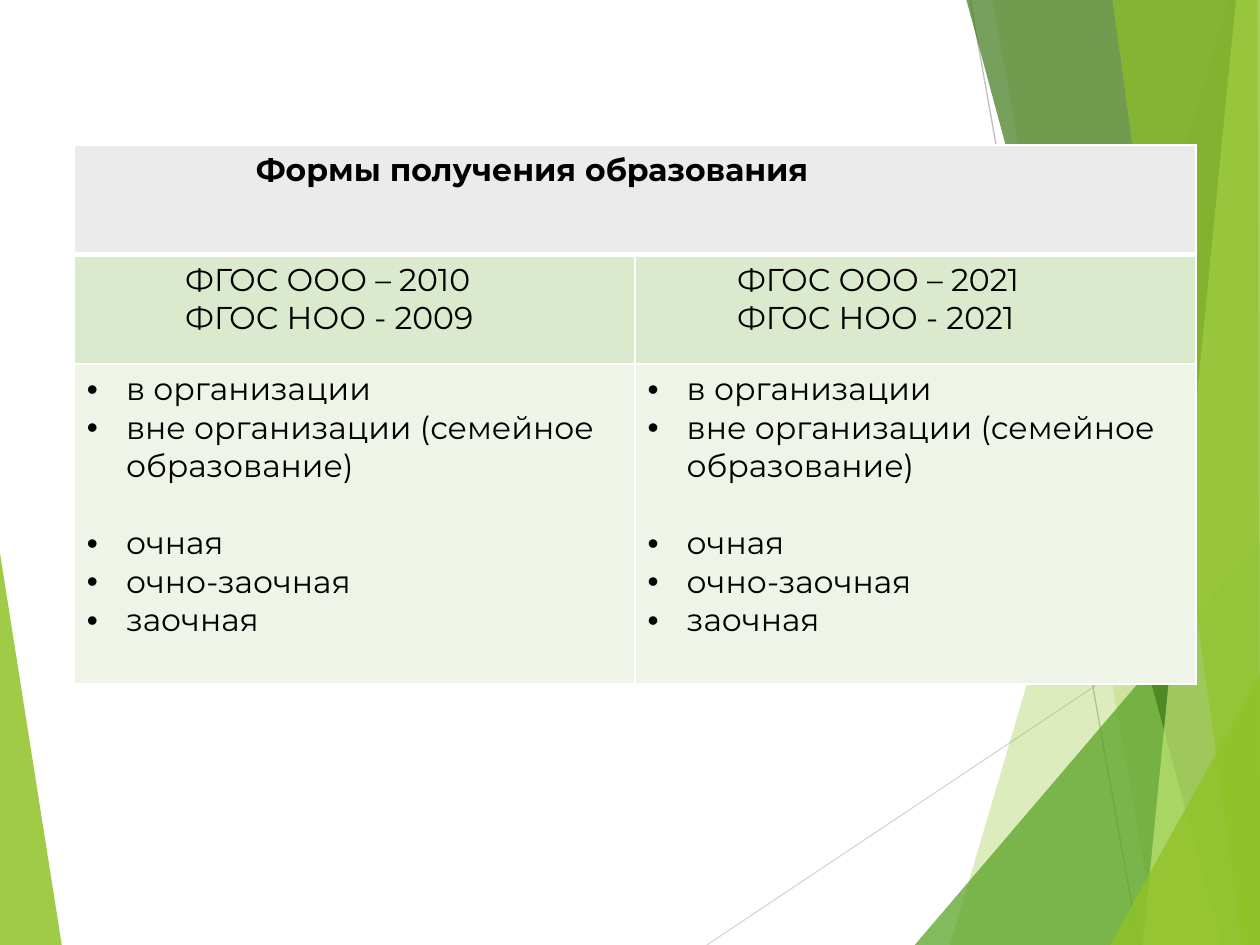
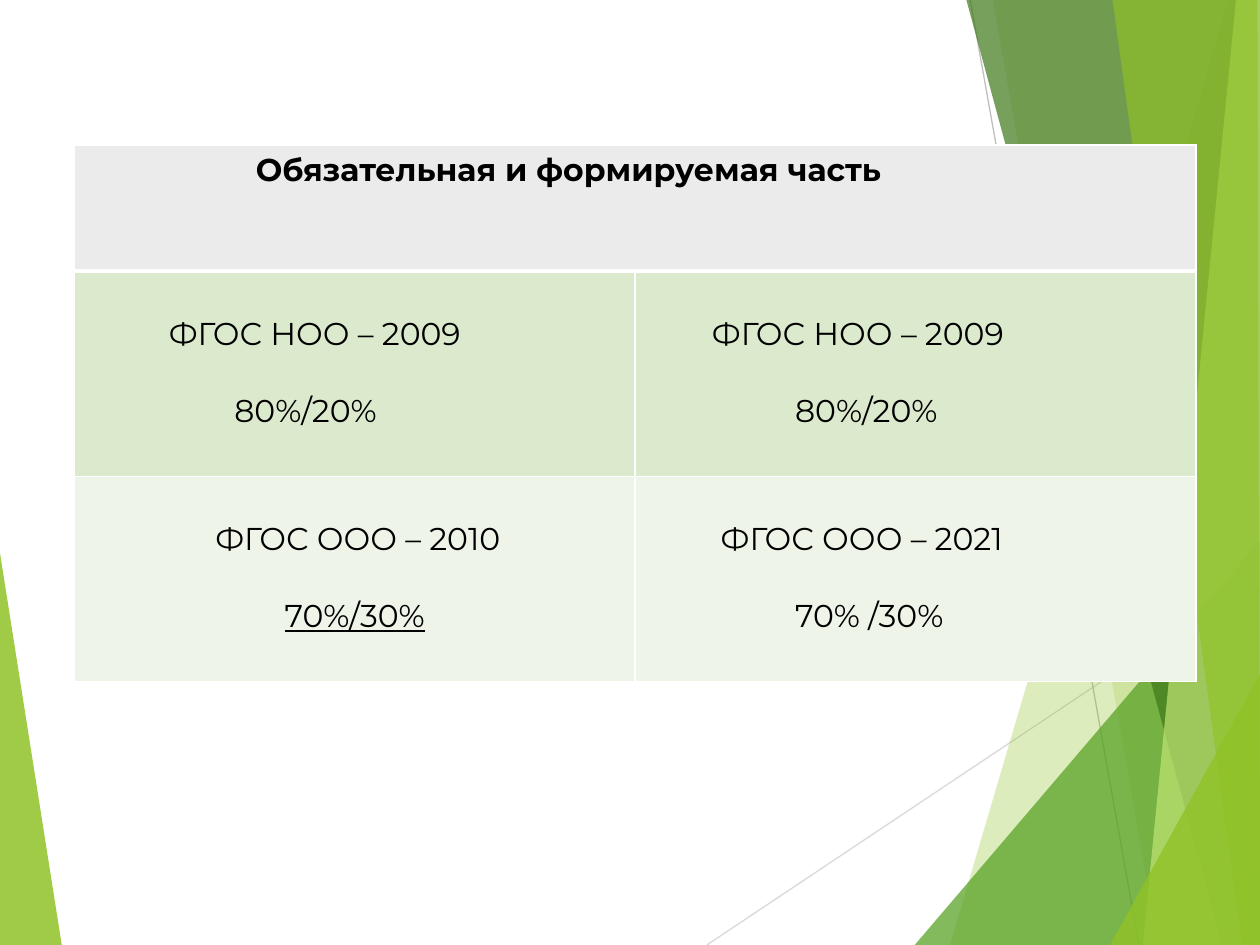
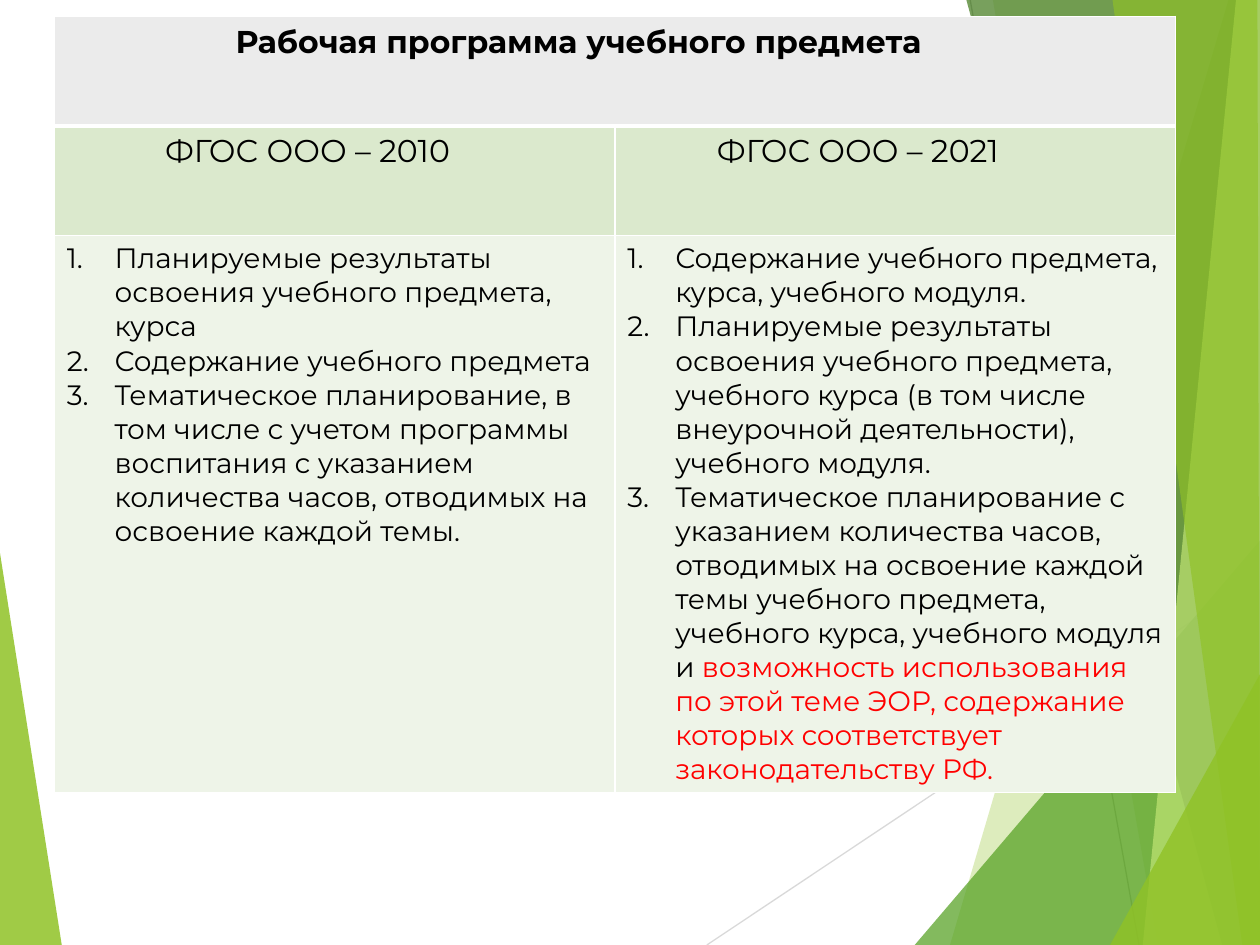
from dataclasses import dataclass

from lxml import etree
from pptx import Presentation, util as u
from pptx.dml.color import RGBColor
from pptx.enum import shapes, text
from pptx.oxml import ns


@dataclass(frozen=True)
class Theme:
    """Colours, font and type sizes of the deck."""
    font: str = "Montserrat"
    body: int = 18
    small: int = 16
    blank: int = 22
    ink: str = "000000"
    red: str = "FF0000"
    rule: str = "FFFFFF"
    lime: str = "90C226"
    leaf: str = "54A021"
    moss: str = "3F7819"
    pale: str = "C0E474"
    rows: tuple = ("EBEBEB", "DBE9CD", "EEF4E8")
    rays: tuple = ("D9D9D9", "BFBFBF")


@dataclass
class Para:
    """One paragraph of a table cell."""
    words: str
    left: float = 0
    gap: float = 0
    mark: str = ""
    size: int = 18
    bold: bool = False
    line: bool = False
    mid: bool = False
    red: str = ""


T = Theme()
WIDE, HIGH = 10, 7.5
HEAD, OLD, NEW, RATE = 1.34, 0.78, 0.71, 1.17
PAD, DROP = 0.05, 0.35

RAYS = [((5.61, 7.5), (10, 4.57)), ((7.7, 0), (9.04, 7.5))]
SHARDS = [
    (T.lime, 30, [(9.75, 0), (7.54, 7.5), (10, 7.5), (10, 0)]),
    (T.lime, 20, [(7.88, 0), (9.19, 7.5), (10, 7.5), (10, 0)]),
    (T.leaf, 72, [(7.26, 7.5), (10, 4.29), (10, 7.5)]),
    (T.moss, 70, [(7.67, 0), (9.7, 7.5), (10, 7.5), (10, 0)]),
    (T.pale, 70, [(9.81, 0), (9.07, 7.5), (10, 7.5), (10, 0)]),
    (T.lime, 65, [(8.83, 0), (9.86, 7.5), (10, 7.5), (9.98, 0)]),
    (T.lime, 80, [(8.81, 7.5), (10, 5.35), (10, 7.5)]),
]
WEDGE = (T.lime, 85, [(0, 4.39), (0.49, 7.5), (0, 7.5)])


def rgb(code):
    """Turn a hex code into a colour."""
    return RGBColor.from_string(code)


def node(host, tag, **attrs):
    """Append a DrawingML element to the host."""
    return etree.SubElement(host, ns.qn("a:" + tag), attrs)


def shard(slide, box, hue, alpha, pts):
    """Draw one translucent polygon inside the box."""
    spots = [(u.Inches(box[0] + x), u.Inches(box[1] + y)) for x, y in pts]
    pen = slide.shapes.build_freeform(*spots[0])
    pen.add_line_segments(spots[1:], close=True)
    shape = pen.convert_to_shape()
    shape.shadow.inherit = False
    shape.line.fill.background()
    shape.fill.solid()
    shape.fill.fore_color.rgb = rgb(hue)
    tint = shape.fill._xPr.find(".//" + ns.qn("a:srgbClr"))
    node(tint, "alpha", val=str(alpha * 1000))


def ray(slide, box, ends, hue):
    """Draw one thin line inside the box."""
    spots = [u.Inches(box[i] + end[i]) for end in ends for i in (0, 1)]
    line = slide.shapes.add_connector(shapes.MSO_CONNECTOR.STRAIGHT, *spots)
    line.line.color.rgb = rgb(hue)
    line.line.width = u.Pt(0.75)
    node(line._element.spPr, "effectLst")


def decor(slide, box):
    """Draw the green facets shared by all slides."""
    shard(slide, box, *WEDGE)
    for ends, hue in zip(RAYS, T.rays):
        ray(slide, box, ends, hue)
    for item in SHARDS:
        shard(slide, box, *item)


def bullet(para, mark):
    """Give a paragraph a dot or a number."""
    props = para._p.get_or_add_pPr()
    if mark == "•":
        node(props, "buFont", typeface="Arial")
        node(props, "buChar", char=mark)
    else:
        node(props, "buAutoNum", type=mark)


def write(para, item):
    """Write one paragraph with its indent, gap and font."""
    props = para._p.get_or_add_pPr()
    props.set("marL", str(u.Inches(item.left)))
    if item.mark:
        props.set("indent", str(-u.Inches(item.left)))
        bullet(para, item.mark)
    para.alignment = text.PP_ALIGN.CENTER if item.mid else text.PP_ALIGN.LEFT
    if item.gap:
        para.space_before = u.Pt(item.gap)
    font = para.font
    font.name, font.size, font.bold = T.font, u.Pt(item.size), item.bold
    font.color.rgb = rgb(T.ink)
    para.add_run().text = item.words
    if item.line:
        font.underline = True
    if item.red:
        run = para.add_run()
        run.text = item.red
        run.font.color.rgb = rgb(T.red)


def edge(cell, row):
    """Rule the cell in white, thick under the heading row."""
    props = cell._tc.get_or_add_tcPr()
    thick = {(0, "B"), (1, "T")}
    for i, side in enumerate("LRTB"):
        width = u.Pt(3 if (row, side) in thick else 1)
        line = node(props, "ln" + side, w=str(width))
        node(node(line, "solidFill"), "srgbClr", val=T.rule)
        props.insert(i, line)


def fill(cell, row, items, top):
    """Colour, rule and fill one cell."""
    cell.fill.solid()
    cell.fill.fore_color.rgb = rgb(T.rows[row])
    edge(cell, row)
    cell.margin_top = u.Inches(top)
    frame = cell.text_frame
    for i, item in enumerate(items):
        write(frame.add_paragraph() if i else frame.paragraphs[0], item)


def grid(slide, box, title, highs, pairs, top=PAD):
    """Build a two-column comparison under one heading."""
    x, y, w = box
    place = [u.Inches(n) for n in (x, y, w, sum(highs))]
    table = slide.shapes.add_table(len(highs), 2, *place).table
    table.first_row = table.horz_banding = False
    for col in table.columns:
        col.width = u.Inches(w / 2)
    head = [Para(title, HEAD, bold=True)]
    for r, (high, pair) in enumerate(zip(highs, [(head, [])] + pairs)):
        table.rows[r].height = u.Inches(high)
        for c, items in enumerate(pair):
            fill(table.cell(r, c), r, items, top if r else PAD)
    table.cell(0, 0).merge(table.cell(0, 1))


def share(name, left, rate):
    """Pair a standard with its ratio, one blank line apart."""
    return [Para(name, left), Para(rate, RATE, T.blank)]


def count(*words, red=""):
    """Number the items and end the last one in red."""
    items = [Para(w, 0.38, mark="arabicPeriod", size=T.small) for w in words]
    items[-1].red = red
    return items


def forms(slide, box):
    """Compare the forms of education."""
    words = ["в организации", "вне организации (семейное образование)",
             "очная", "очно-заочная", "заочная"]
    dots = [Para(w, 0.31, T.blank if w == "очная" else 0, "•") for w in words]
    names = ([Para("ФГОС ООО – 2010", OLD), Para("ФГОС НОО - 2009", OLD)],
             [Para("ФГОС ООО – 2021", NEW), Para("ФГОС НОО - 2021", NEW)])
    grid(slide, box, "Формы получения образования", (0.87, 0.87, 2.54),
         [names, (dots, dots)])


def parts(slide, box):
    """Compare the required and the variable part."""
    first = (share("ФГОС НОО – 2009", 0.65, "80%/20%"),
             share("ФГОС НОО – 2009", 0.51, "80%/20%"))
    mid = [Para("ФГОС ООО – 2010", 0.05, mid=True),
           Para("70%/30%", gap=T.blank, line=True, mid=True)]
    grid(slide, box, "Обязательная и формируемая часть", (1, 1.63, 1.63),
         [first, (mid, share("ФГОС ООО – 2021", 0.58, "70% /30%"))], DROP)


def plan(slide, box):
    """Compare the contents of a subject programme."""
    old = count(
        "Планируемые результаты освоения учебного предмета, курса",
        "Содержание учебного предмета",
        "Тематическое планирование, в том числе с учетом программы "
        "воспитания с указанием количества часов, отводимых на освоение "
        "каждой темы.")
    new = count(
        "Содержание учебного предмета, курса, учебного модуля.",
        "Планируемые результаты освоения учебного предмета, учебного курса "
        "(в том числе внеурочной деятельности), учебного модуля.",
        "Тематическое планирование с указанием количества часов, отводимых "
        "на освоение каждой темы учебного предмета, учебного курса, "
        "учебного модуля и ",
        red="возможность использования по этой теме ЭОР, содержание которых "
            "соответствует законодательству РФ.")
    names = [Para("ФГОС ООО – 2010", OLD)], [Para("ФГОС ООО – 2021", NEW)]
    grid(slide, box, "Рабочая программа учебного предмета",
         (0.87, 0.87, 4.42), [names, (old, new)])


def main():
    """Build the three slides and save the deck."""
    deck = Presentation()
    deck.slide_width, deck.slide_height = u.Inches(WIDE), u.Inches(HIGH)
    pages = [(forms, (0.59, 1.15, 8.9)), (parts, (0.59, 1.15, 8.9)),
             (plan, (0.43, 0.13, 8.9))]
    for build, box in pages:
        slide = deck.slides.add_slide(deck.slide_layouts[6])
        decor(slide, (0, 0))
        build(slide, box)
    deck.save("out.pptx")


if __name__ == "__main__":
    main()
